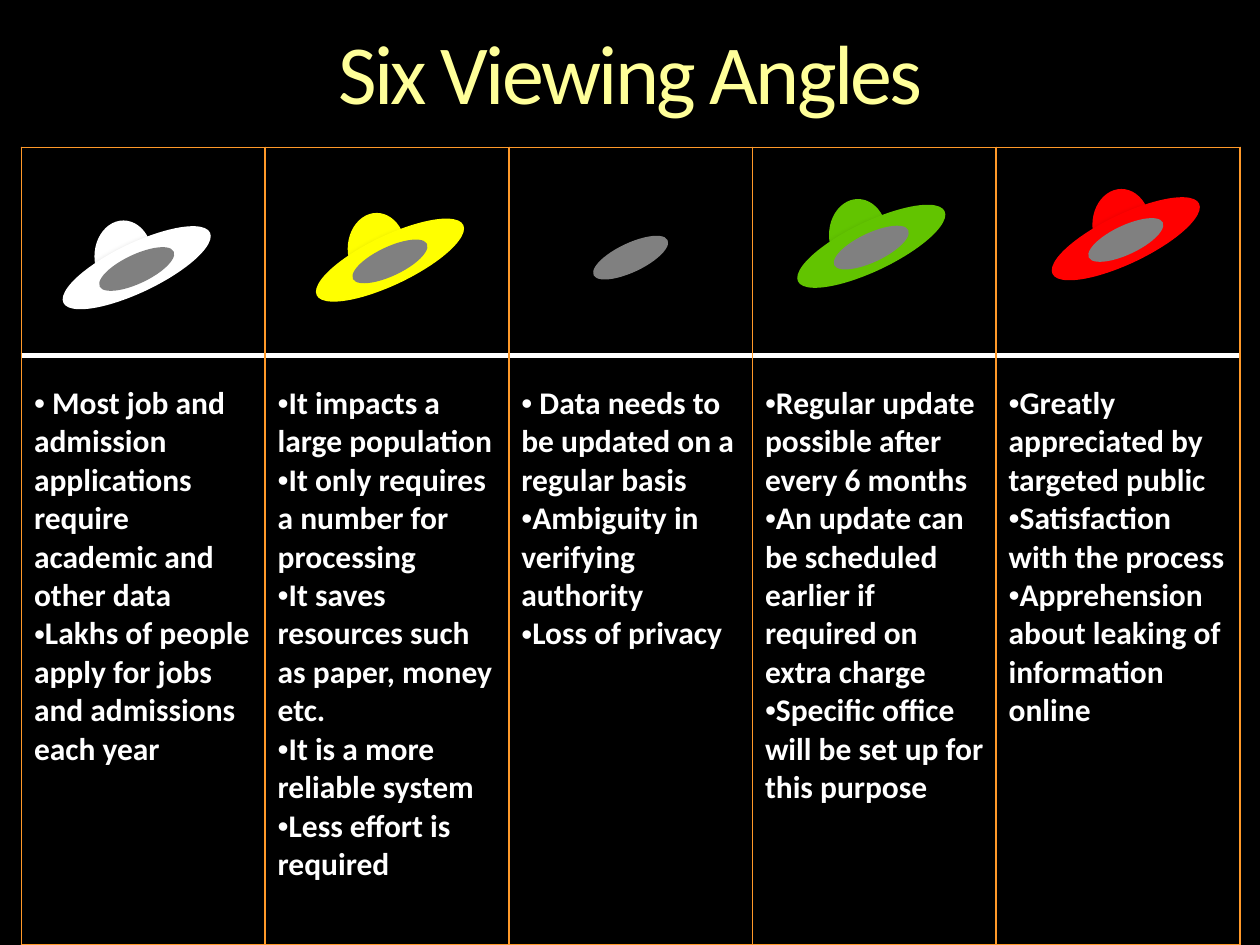
from dataclasses import dataclass

import lxml.etree
import pptx
import pptx.dml.color
import pptx.enum.shapes
import pptx.enum.text
import pptx.oxml.ns
import pptx.util
from pptx.util import Inches


@dataclass(frozen=True)
class Theme:
    background: str = "000000"
    title: str = "FFFF99"
    text: str = "FFFFFF"
    rule: str = "FFFFFF"
    grid: str = "FF9929"
    lining: str = "808080"
    font: str = "Calibri"
    title_size: float = 48
    text_size: float = 18
    thin: float = 1
    thick: float = 3


@dataclass(frozen=True)
class Hat:
    color: str
    left: float
    top: float
    points: tuple[str, ...]
    dome_shift: tuple[float, float] = (0.31, -0.18)


THEME = Theme()
SHAPES = pptx.enum.shapes.MSO_SHAPE
TABLE_LEFT, TABLE_TOP, TABLE_WIDTH = 0.17, 1.17, 9.67
HAT_ROW, TEXT_ROW = 1.65, 4.68
TEXT_INSET = 0.23

HATS = (
    Hat("FFFFFF", 0.44, 1.93, (
        " Most job and admission applications require academic and other data",
        "Lakhs of people apply for jobs and admissions each year",
    )),
    Hat("FFFF00", 2.45, 1.87, (
        "It impacts a large population",
        "It only requires a number for processing",
        "It saves resources such as paper, money etc.",
        "It is a more reliable system",
        "Less effort is required",
    )),
    Hat("000000", 4.36, 1.84, (
        " Data needs to be updated on a regular basis",
        "Ambiguity in verifying authority",
        "Loss of privacy",
    ), (0.31, -0.26)),
    Hat("62C400", 6.27, 1.76, (
        "Regular update possible after every 6 months",
        "An update can be scheduled earlier if required on extra charge",
        "Specific office will be set up for this purpose",
    )),
    Hat("FF0000", 8.29, 1.7, (
        "Greatly appreciated by targeted public",
        "Satisfaction with the process",
        "Apprehension about leaking of information online",
    ), (0.38, -0.2)),
)


def rgb(color: str) -> pptx.dml.color.RGBColor:
    return pptx.dml.color.RGBColor.from_string(color)


def add_element(parent, tag: str, **attributes: str):
    element = lxml.etree.SubElement(parent, pptx.oxml.ns.qn(tag))
    for name, value in attributes.items():
        element.set(name, value)
    return element


def format_run(run, size: float, color: str, bold: bool) -> None:
    run.font.name = THEME.font
    run.font.size = pptx.util.Pt(size)
    run.font.bold = bold
    run.font.color.rgb = rgb(color)


def set_borders(cell, color: str, widths: dict[str, float]) -> None:
    properties = cell._tc.get_or_add_tcPr()
    for side in "LRTB":
        width = pptx.util.Pt(widths.get(side, THEME.thin))
        line = add_element(properties, f"a:ln{side}", w=str(width))
        add_element(add_element(line, "a:solidFill"), "a:srgbClr", val=color)


def add_grid(slide, heights: tuple[float, ...], color: str, rules: tuple[dict, ...]):
    table = slide.shapes.add_table(
        len(heights), len(HATS), Inches(TABLE_LEFT), Inches(TABLE_TOP),
        Inches(TABLE_WIDTH), Inches(sum(heights))).table
    table.first_row = False
    table.horz_banding = False
    for row, height, widths in zip(table.rows, heights, rules):
        row.height = Inches(height)
        for cell in row.cells:
            set_borders(cell, color, widths)
            cell.fill.background()
    return table


def write_points(cell, points: tuple[str, ...]) -> None:
    cell.margin_top = Inches(HAT_ROW + TEXT_INSET)
    cell.text_frame.text = "\n".join(points)
    for paragraph in cell.text_frame.paragraphs:
        properties = paragraph._p.get_or_add_pPr()
        properties.set("marL", "0")
        properties.set("indent", "0")
        add_element(properties, "a:buFont", typeface="Arial")
        add_element(properties, "a:buChar", char="•")
        format_run(paragraph.runs[0], THEME.text_size, THEME.text, True)


def add_title(slide, text: str) -> None:
    text_frame = slide.shapes.add_textbox(
        Inches(0.42), Inches(0.25), Inches(9.17), Inches(0.73)).text_frame
    text_frame.word_wrap = True
    text_frame.vertical_anchor = pptx.enum.text.MSO_ANCHOR.MIDDLE
    text_frame.margin_left = text_frame.margin_right = 0
    text_frame.margin_top = text_frame.margin_bottom = 0
    text_frame.text = text
    paragraph = text_frame.paragraphs[0]
    paragraph.alignment = pptx.enum.text.PP_ALIGN.CENTER
    paragraph.line_spacing = 0.9
    format_run(paragraph.runs[0], THEME.title_size, THEME.title, False)
    paragraph.runs[0].font._element.set("spc", "-150")


def add_oval(slide, preset, left: float, top: float, width: float, height: float,
             color: str, rotation: float = 0):
    shape = slide.shapes.add_shape(
        preset, Inches(left), Inches(top), Inches(width), Inches(height))
    shape.rotation = rotation
    shape.shadow.inherit = False
    shape.fill.solid()
    shape.fill.fore_color.rgb = rgb(color)
    shape.line.fill.background()
    return shape


def add_shadow(shape) -> None:
    effects = shape._element.spPr.find(pptx.oxml.ns.qn("a:effectLst"))
    shadow = add_element(
        effects, "a:outerShdw", blurRad=str(pptx.util.Pt(5)),
        dist=str(pptx.util.Pt(3)), dir="5400000", rotWithShape="0")
    color = add_element(shadow, "a:srgbClr", val="000000")
    add_element(color, "a:alpha", val="45000")


def add_hat(slide, hat: Hat) -> None:
    shift_x, shift_y = hat.dome_shift
    dome = add_oval(slide, SHAPES.OVAL, hat.left + shift_x, hat.top + shift_y,
                    0.46, 0.57, hat.color)
    brim = add_oval(slide, SHAPES.FLOWCHART_CONNECTOR, hat.left, hat.top,
                    1.29, 0.39, hat.color, 334.4)
    add_shadow(dome)
    add_shadow(brim)
    add_oval(slide, SHAPES.FLOWCHART_CONNECTOR, hat.left + 0.32, hat.top + 0.09,
             0.65, 0.23, THEME.lining, 334.7)


def main() -> None:
    presentation = pptx.Presentation()
    presentation.slide_width = Inches(10)
    presentation.slide_height = Inches(7.5)
    slide = presentation.slides.add_slide(presentation.slide_layouts[6])
    slide.background.fill.solid()
    slide.background.fill.fore_color.rgb = rgb(THEME.background)

    add_grid(slide, (HAT_ROW, TEXT_ROW), THEME.rule,
             ({"B": THEME.thick}, {"T": THEME.thick}))
    columns = add_grid(slide, (HAT_ROW + TEXT_ROW,), THEME.grid, ({},))
    add_title(slide, "Six Viewing Angles")
    for index, hat in enumerate(HATS):
        write_points(columns.cell(0, index), hat.points)
        add_hat(slide, hat)
    presentation.save("out.pptx")


if __name__ == "__main__":
    main()
